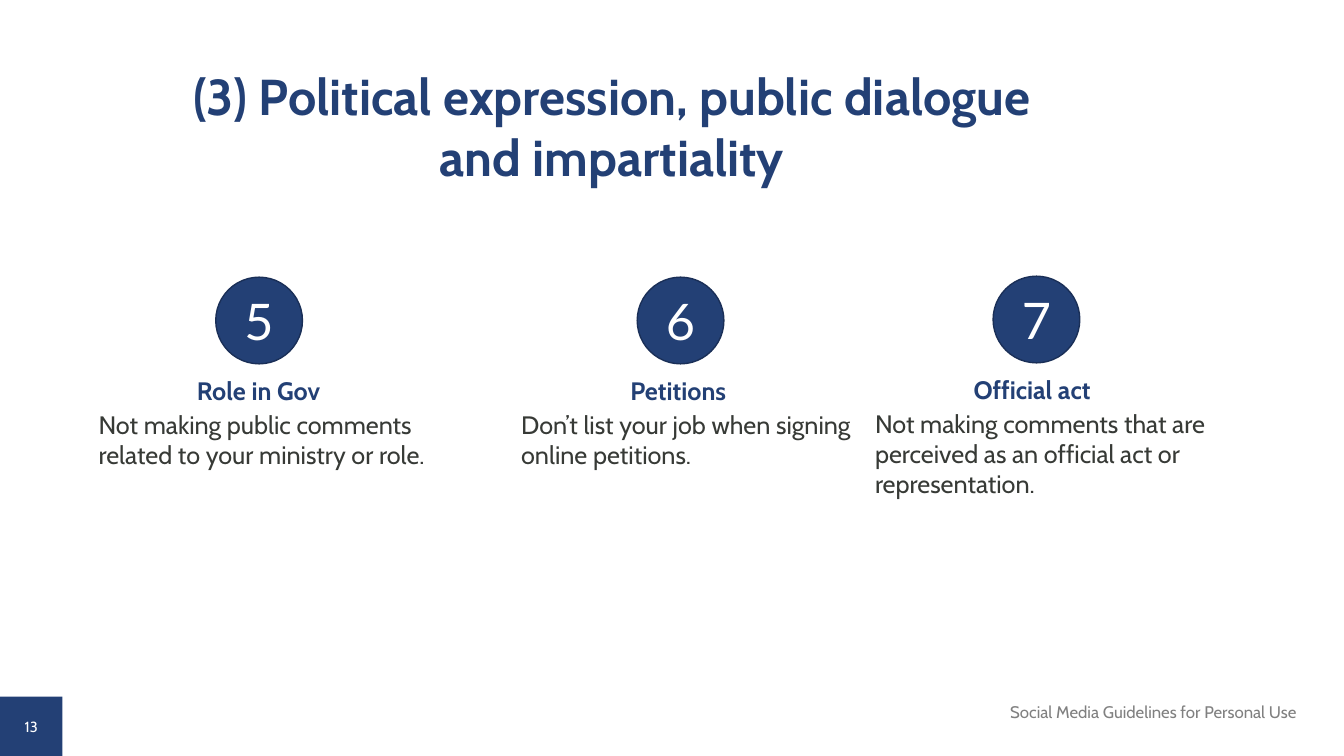
from pptx import Presentation
from pptx.dml.color import RGBColor
from pptx.enum.shapes import MSO_SHAPE
from pptx.enum.text import MSO_ANCHOR, PP_ALIGN
from pptx.util import Inches, Pt

RECT, OVAL = MSO_SHAPE.RECTANGLE, MSO_SHAPE.OVAL
TOP, MIDDLE = MSO_ANCHOR.TOP, MSO_ANCHOR.MIDDLE
LEFT, CENTER, RIGHT = PP_ALIGN.LEFT, PP_ALIGN.CENTER, PP_ALIGN.RIGHT

NAVY, EDGE, WHITE = "234075", "1A2F57", "FFFFFF"
DARK, GREY = "373A36", "808080"
DISC = 0.86
HEAD_W = 3.37

POINTS = [
    ("5", "Role in Gov",
     "Not making public comments related to your ministry or role.",
     0.88, 3.61, 4.06, 2.14),
    ("6", "Petitions ",
     "Don’t list your job when signing online petitions.",
     5.07, 3.61, 3.62, 6.32),
    ("7", "Official act ",
     "Not making comments that are perceived as an official act or representation.",
     8.58, 3.6, 3.49, 9.85),
]


def color(code):
    return RGBColor.from_string(code)


def write(shape, text, size=18, font="Cabin", ink=DARK, bold=False,
          align=LEFT, anchor=TOP, before=0):
    frame = shape.text_frame
    frame.word_wrap = True
    frame.vertical_anchor = anchor
    frame.text = text
    para = frame.paragraphs[0]
    para.alignment = align
    para.space_before = Pt(before)
    for run in para.runs:
        run.font.size = Pt(size)
        run.font.name = font
        run.font.bold = bold
        run.font.color.rgb = color(ink)


def add_text(slide, box, text, **style):
    shape = slide.shapes.add_textbox(*map(Inches, box))
    write(shape, text, **style)


def add_solid(slide, kind, box, edge=None):
    shape = slide.shapes.add_shape(kind, *map(Inches, box))
    shape.shadow.inherit = False
    shape.fill.solid()
    shape.fill.fore_color.rgb = color(NAVY)
    if edge:
        shape.line.color.rgb = color(edge)
        shape.line.width = Pt(1)
    else:
        shape.line.fill.background()
    return shape


def add_point(slide, number, head, body, left, top, width, disc_x):
    add_text(slide, (left, top, HEAD_W, 0.53), head, ink=NAVY, bold=True,
             align=CENTER, anchor=MIDDLE, before=10)
    add_text(slide, (left, top + 0.4, width, 3.37), body, before=10)
    disc = add_solid(slide, OVAL, (disc_x, top - DISC, DISC, DISC), EDGE)
    write(disc, number, size=36, font="Lato", ink=WHITE,
          align=CENTER, anchor=MIDDLE)


def main():
    deck = Presentation()
    deck.slide_width = Inches(13.33)
    deck.slide_height = Inches(7.5)
    slide = deck.slides.add_slide(deck.slide_layouts[6])

    add_solid(slide, RECT, (0, 6.91, 0.62, 0.59))
    add_text(slide, (0, 7.02, 0.62, 0.38), "13", size=10.5, ink=WHITE,
             align=CENTER, anchor=MIDDLE)
    add_text(slide, (1, 0.6, 10.25, 1.31),
             "(3) Political expression, public dialogue \vand impartiality ",
             size=36, ink=NAVY, bold=True, align=CENTER)
    for point in POINTS:
        add_point(slide, *point)
    add_text(slide, (9.54, 6.91, 3.42, 0.3),
             "Social Media Guidelines for Personal Use",
             size=12, ink=GREY, align=RIGHT)

    deck.save("out.pptx")


if __name__ == "__main__":
    main()
